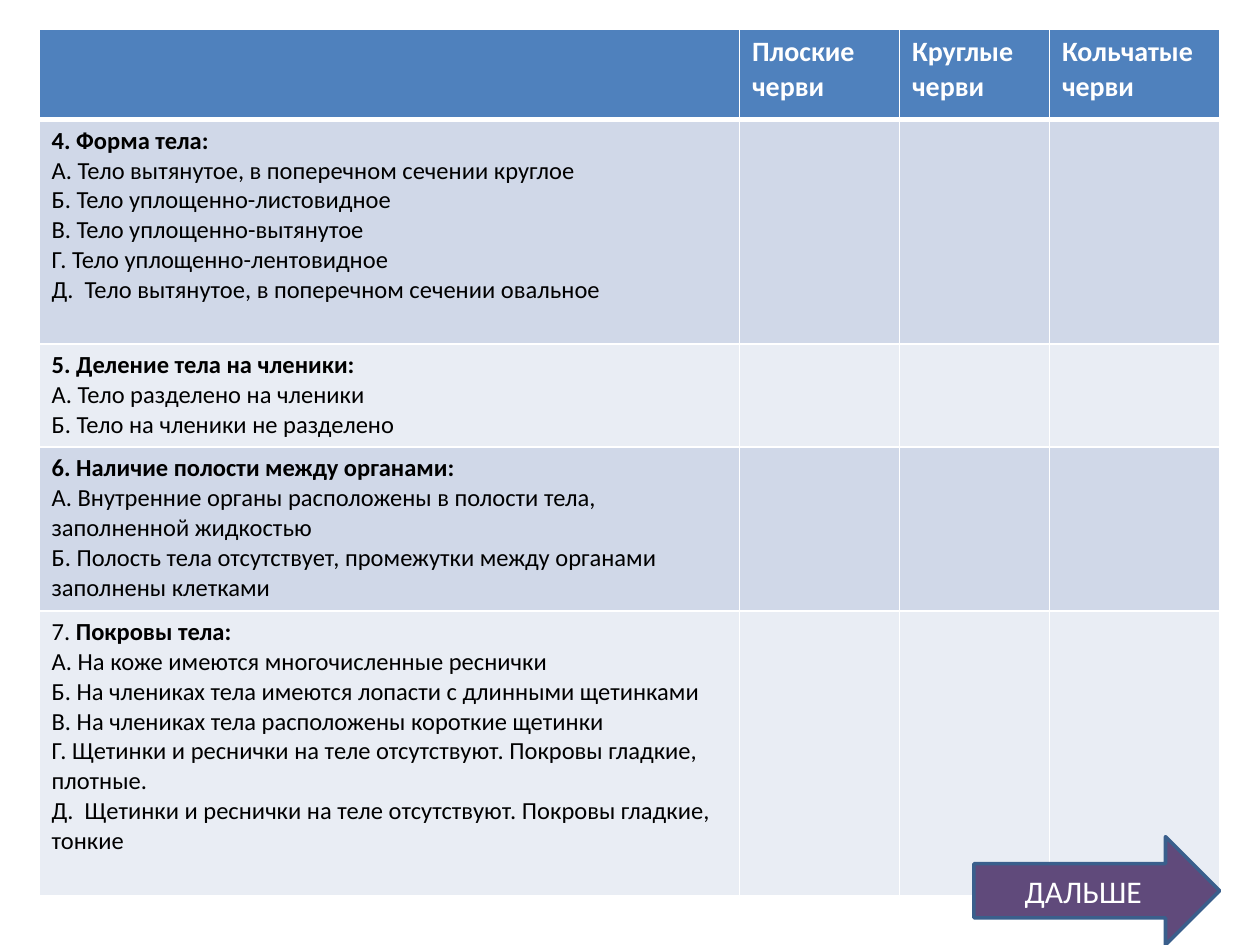
from lxml.etree import SubElement
from pptx import Presentation
from pptx.dml.color import RGBColor
from pptx.enum.shapes import MSO_SHAPE
from pptx.enum.text import MSO_ANCHOR, PP_ALIGN
from pptx.oxml.ns import qn
from pptx.util import Inches, Pt

HEADERS = ["", "Плоские\nчерви", "Круглые\nчерви", "Кольчатые\nчерви"]
# Each question: plain prefix, bold heading, answers
QUESTIONS = [
    ("", "4. Форма тела:", [
        "А. Тело вытянутое, в поперечном сечении круглое",
        "Б. Тело уплощенно-листовидное",
        "В. Тело уплощенно-вытянутое",
        "Г. Тело уплощенно-лентовидное",
        "Д.  Тело вытянутое, в поперечном сечении овальное"]),
    ("", "5. Деление тела на членики:", [
        "А. Тело разделено на членики",
        "Б. Тело на членики не разделено"]),
    ("", "6. Наличие полости между органами:", [
        "А. Внутренние органы расположены в полости тела, заполненной жидкостью",
        "Б. Полость тела отсутствует, промежутки между органами заполнены клетками"]),
    ("7. ", "Покровы тела:", [
        "А. На коже имеются многочисленные реснички",
        "Б. На члениках тела имеются лопасти с длинными щетинками",
        "В. На члениках тела расположены короткие щетинки",
        "Г. Щетинки и реснички на теле отсутствуют. Покровы гладкие, плотные.",
        "Д.  Щетинки и реснички на теле отсутствуют. Покровы гладкие, тонкие"]),
]
COL_WIDTHS = [5.56, 1.27, 1.19, 1.35]
ROW_HEIGHTS = [0.72, 1.78, 0.82, 1.3, 2.26]


def rgb(value):
    return RGBColor.from_string(value)


class Deck:
    font = "Calibri"
    white, black = "FFFFFF", "000000"
    header_fill, bands = "4F81BD", ("D0D8E8", "E9EDF4")
    arrow_fill, arrow_line = "604A7B", "3A5F8C"

    def __init__(self, s):
        self.s = s

    def format(self, p, size, color, bold=None):
        p.font.name, p.font.size, p.font.bold = self.font, Pt(size), bold
        p.font.color.rgb = rgb(color)

    def paint(self, cell, color, bottom=1, top=1):
        """Set the cell's white borders, then its fill."""
        tc_pr = cell._tc.get_or_add_tcPr()
        for side, width in (("L", 1), ("R", 1), ("T", top), ("B", bottom)):
            ln = SubElement(tc_pr, qn(f"a:ln{side}"), w=str(Pt(width)))
            SubElement(SubElement(ln, qn("a:solidFill")), qn("a:srgbClr"), val=self.white)
        cell.fill.solid()
        cell.fill.fore_color.rgb = rgb(color)

    def question(self, cell, prefix, heading, answers):
        tf = cell.text_frame
        p = tf.paragraphs[0]
        if prefix:
            p.add_run().text = prefix
        r = p.add_run()
        r.text = heading
        r.font.bold = True
        self.format(p, 14, self.black)
        for answer in answers:
            p = tf.add_paragraph()
            p.text = answer
            self.format(p, 14, self.black, False)

    def table(self, left, top):
        table = self.s.shapes.add_table(
            len(ROW_HEIGHTS), len(COL_WIDTHS), Inches(left), Inches(top),
            Inches(sum(COL_WIDTHS)), Inches(sum(ROW_HEIGHTS))).table
        for column, width in zip(table.columns, COL_WIDTHS):
            column.width = Inches(width)
        for row, height in zip(table.rows, ROW_HEIGHTS):
            row.height = Inches(height)
        for cell, text in zip(table.rows[0].cells, HEADERS):
            self.paint(cell, self.header_fill, bottom=3)
            cell.text = text
            for p in cell.text_frame.paragraphs:
                self.format(p, 16, self.white, True)
        for i, content in enumerate(QUESTIONS, 1):
            for cell in table.rows[i].cells:
                self.paint(cell, self.bands[(i - 1) % 2], top=3 if i == 1 else 1)
            self.question(table.cell(i, 0), *content)

    def arrow(self, left, top, width, height, text):
        sp = self.s.shapes.add_shape(
            MSO_SHAPE.RIGHT_ARROW, Inches(left), Inches(top), Inches(width), Inches(height))
        sp.shadow.inherit = False
        sp.fill.solid()
        sp.fill.fore_color.rgb = rgb(self.arrow_fill)
        sp.line.color.rgb = rgb(self.arrow_line)
        sp.line.width = Pt(2)
        tf = sp.text_frame
        tf.vertical_anchor = MSO_ANCHOR.MIDDLE
        p = tf.paragraphs[0]
        p.text = text
        p.alignment = PP_ALIGN.CENTER
        self.format(p, 18, self.white)


def main():
    prs = Presentation()
    prs.slide_width, prs.slide_height = Inches(10), Inches(7.5)
    deck = Deck(prs.slides.add_slide(prs.slide_layouts[6]))
    deck.table(0.31, 0.23)
    deck.arrow(7.73, 6.64, 1.95, 0.86, "ДАЛЬШЕ")
    prs.save("out.pptx")


if __name__ == "__main__":
    main()
